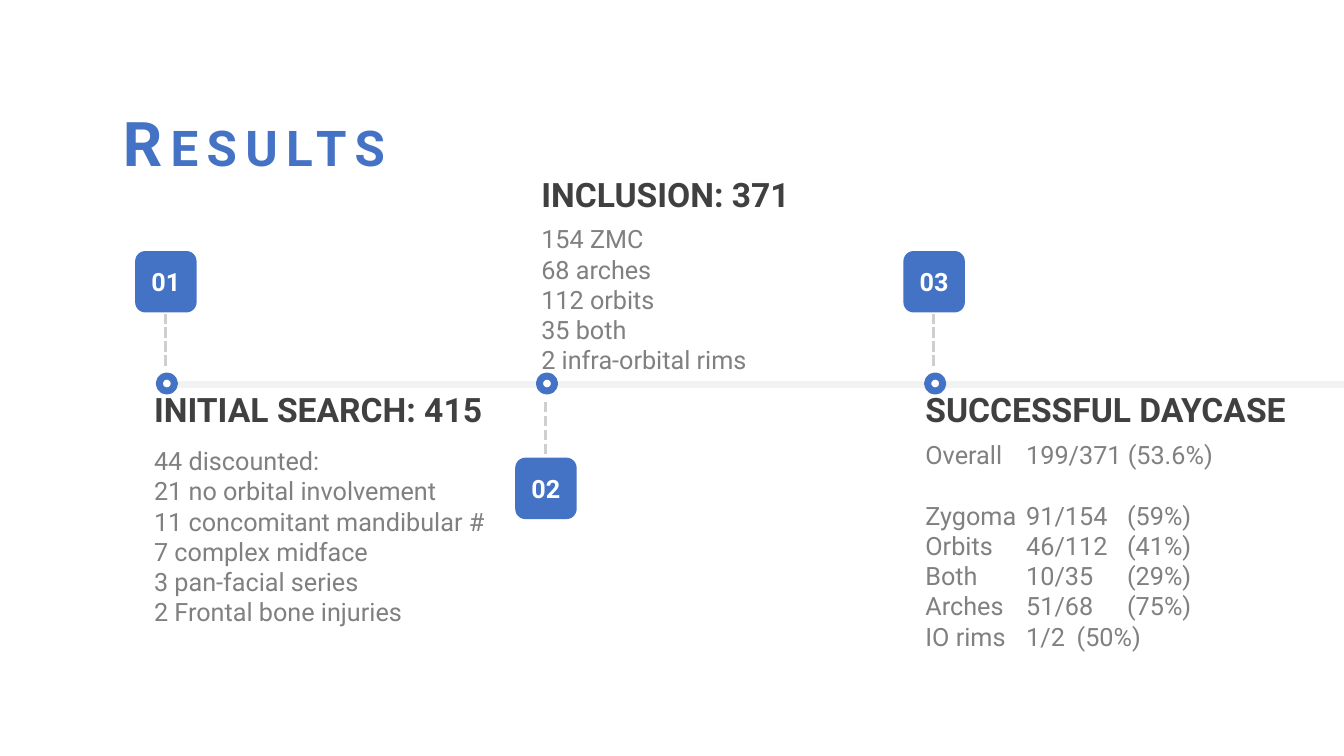
from lxml import etree
from pptx import Presentation
from pptx.dml.color import RGBColor
from pptx.enum.dml import MSO_LINE
from pptx.enum.shapes import MSO_CONNECTOR, MSO_SHAPE
from pptx.enum.text import MSO_ANCHOR, MSO_AUTO_SIZE, PP_ALIGN
from pptx.oxml.ns import qn
from pptx.util import Pt

EMU_PER_PX = 9144
FONT = "Roboto"
BLUE = RGBColor(0x44, 0x72, 0xC4)
WHITE = RGBColor(0xFF, 0xFF, 0xFF)
DARK = RGBColor(0x40, 0x40, 0x40)
GRAY = RGBColor(0x80, 0x80, 0x80)
STEM_GRAY = RGBColor(0xD0, 0xCE, 0xCE)
AXIS_GRAY = RGBColor(0xF2, 0xF2, 0xF2)

STRAIGHT = MSO_CONNECTOR.STRAIGHT
DASH = MSO_LINE.SQUARE_DOT
OVAL = MSO_SHAPE.OVAL
ROUNDED = MSO_SHAPE.ROUNDED_RECTANGLE
MIDDLE = MSO_ANCHOR.MIDDLE
CENTER = PP_ALIGN.CENTER
GROW = MSO_AUTO_SIZE.SHAPE_TO_FIT_TEXT

SLIDE_WIDTH, SLIDE_HEIGHT = 1333, 750
AXIS_Y = 381
BADGE_SIZE = 61
DOT_SIZE = 15
STEM_LENGTH = 109
LINE_PITCH = Pt(21.6)

SEARCH_LINES = [
    "44 discounted:",
    "21 no orbital involvement",
    "11 concomitant mandibular #",
    "7 complex midface",
    "3 pan-facial series",
    "2 Frontal bone injuries",
]
INCLUSION_LINES = [
    "154 ZMC",
    "68 arches",
    "112 orbits",
    "35 both",
    "2 infra-orbital rims",
]
DAYCASE_LINES = [
    "Overall\t199/371 (53.6%)",
    "Zygoma\t91/154\t(59%)",
    "Orbits\t46/112\t(41%)",
    "Both\t10/35\t(29%)",
    "Arches\t51/68\t(75%)",
    "IO rims\t1/2\t(50%)",
]


def px(length):
    return length * EMU_PER_PX


def style_text(text_frame, size, color, bold=False):
    for paragraph in text_frame.paragraphs:
        for run in paragraph.runs:
            run.font.name = FONT
            run.font.size = Pt(size)
            run.font.bold = bold
            run.font.color.rgb = color


def add_text(slide, box, lines, size, color, bold=False):
    text_frame = slide.shapes.add_textbox(*map(px, box)).text_frame
    text_frame.word_wrap = True
    text_frame.auto_size = GROW
    text_frame.text = "\n".join(lines)
    style_text(text_frame, size, color, bold)
    return text_frame


def add_line(slide, start, end, color, width):
    connector = slide.shapes.add_connector(STRAIGHT, *map(px, start + end))
    connector.line.color.rgb = color
    connector.line.width = Pt(width)
    etree.SubElement(connector._element.spPr, qn("a:effectLst"))
    return connector


def add_plain_shape(slide, kind, left, top, size, fill):
    shape = slide.shapes.add_shape(kind, px(left), px(top), px(size), px(size))
    shape.shadow.inherit = False
    shape.fill.solid()
    shape.fill.fore_color.rgb = fill
    shape.line.fill.background()
    return shape


def add_milestone(slide, number, center, stem_bottom, badge_top):
    dot = add_plain_shape(slide, OVAL, center - 6, AXIS_Y - 8, DOT_SIZE, WHITE)
    dot.line.color.rgb = BLUE
    dot.line.width = Pt(5)
    stem = add_line(slide, (center, stem_bottom),
                    (center, stem_bottom - STEM_LENGTH), STEM_GRAY, 2.5)
    stem.line.dash_style = DASH
    badge = add_plain_shape(slide, ROUNDED, center - BADGE_SIZE // 2,
                            badge_top, BADGE_SIZE, BLUE)
    text_frame = badge.text_frame
    text_frame.text = number
    text_frame.vertical_anchor = MIDDLE
    text_frame.paragraphs[0].alignment = CENTER
    style_text(text_frame, 18, WHITE, True)


def add_title(slide, title):
    text_frame = add_text(slide, (112, 99, 662, 84), [title], 44, BLUE, True)
    properties = text_frame.paragraphs[0].runs[0].font._element
    properties.set("cap", "small")
    properties.set("spc", "600")


def main():
    presentation = Presentation()
    presentation.slide_width = px(SLIDE_WIDTH)
    presentation.slide_height = px(SLIDE_HEIGHT)
    slide = presentation.slides.add_slide(presentation.slide_layouts[6])

    add_line(slide, (161, AXIS_Y), (SLIDE_WIDTH, AXIS_Y), AXIS_GRAY, 5)
    for number, center, stem_bottom, badge_top in [
        ("01", 164, 363, 249),
        ("02", 541, 506, 454),
        ("03", 926, 363, 249),
    ]:
        add_milestone(slide, number, center, stem_bottom, badge_top)

    for heading, box in [
        ("INITIAL SEARCH: 415", (143, 381, 378, 50)),
        ("INCLUSION: 371", (527, 168, 315, 50)),
        ("SUCCESSFUL DAYCASE", (908, 381, 393, 50)),
    ]:
        add_text(slide, box, [heading], 24, DARK, True)

    add_text(slide, (143, 437, 366, 192), SEARCH_LINES, 18, GRAY)
    add_text(slide, (527, 217, 269, 162), INCLUSION_LINES, 18, GRAY)
    daycase = add_text(slide, (908, 431, 408, 222), DAYCASE_LINES, 18, GRAY)
    daycase.paragraphs[1].space_before = LINE_PITCH

    add_title(slide, "Results")
    presentation.save("out.pptx")


if __name__ == "__main__":
    main()
